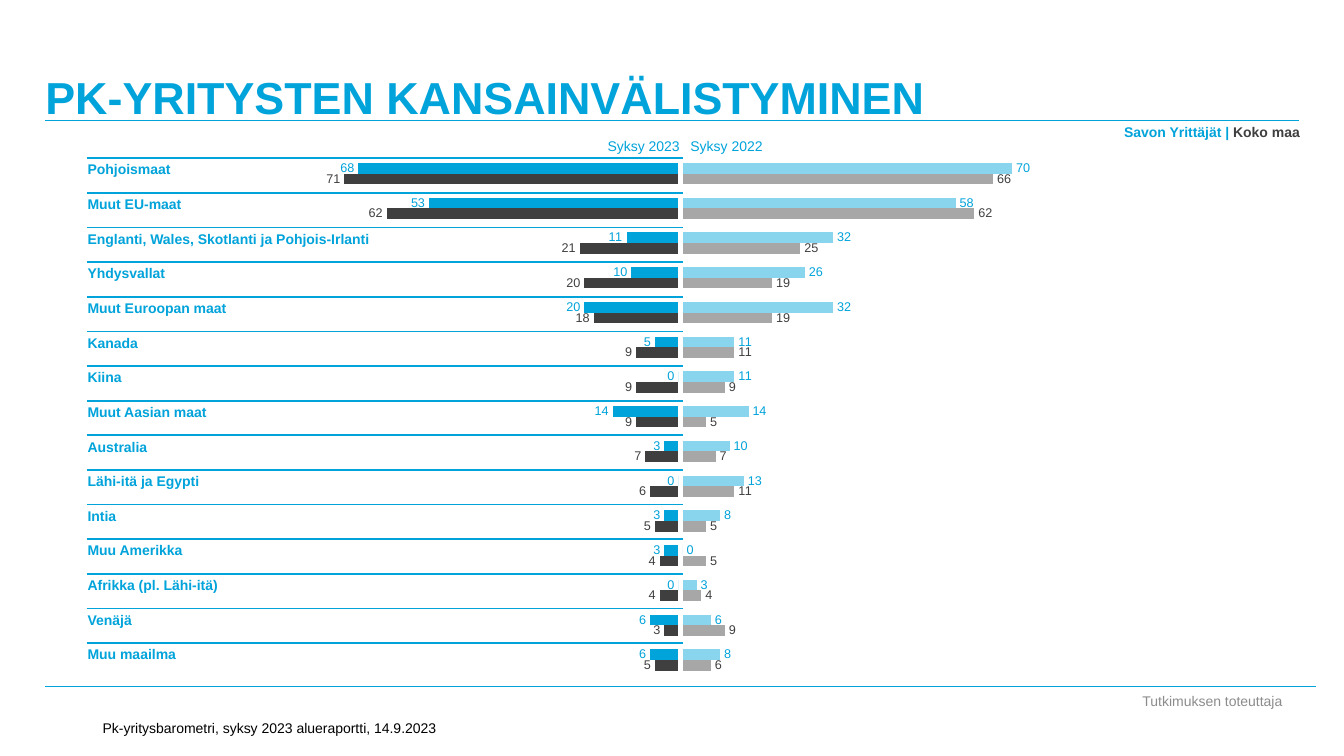
import pptx
import pptx.chart.data
import pptx.dml.color
import pptx.enum.chart
import pptx.enum.shapes
import pptx.enum.text
import pptx.oxml
import pptx.oxml.ns
import pptx.util
from lxml import etree

Inches = pptx.util.Inches
Pt = pptx.util.Pt
RGBColor = pptx.dml.color.RGBColor
Align = pptx.enum.text.PP_ALIGN
Anchor = pptx.enum.text.MSO_ANCHOR
Fit = pptx.enum.text.MSO_AUTO_SIZE
qn = pptx.oxml.ns.qn

BLUE = RGBColor(0x00, 0xA3, 0xDA)
DARK = RGBColor(0x3F, 0x3F, 0x3F)
SKY = RGBColor(0x8A, 0xD5, 0xEE)
SILVER = RGBColor(0xA7, 0xA7, 0xA7)
GRAY = RGBColor(0x8C, 0x8C, 0x8C)
BLACK = RGBColor(0x00, 0x00, 0x00)

# Market, autumn 2023 (region, country), autumn 2022 (region, country)
MARKETS = [
    ("Pohjoismaat", 68, 71, 70, 66),
    ("Muut EU-maat", 53, 62, 58, 62),
    ("Englanti, Wales, Skotlanti ja Pohjois-Irlanti", 11, 21, 32, 25),
    ("Yhdysvallat", 10, 20, 26, 19),
    ("Muut Euroopan maat", 20, 18, 32, 19),
    ("Kanada", 5, 9, 11, 11),
    ("Kiina", 0, 9, 11, 9),
    ("Muut Aasian maat", 14, 9, 14, 5),
    ("Australia", 3, 7, 10, 7),
    ("Lähi-itä ja Egypti", 0, 6, 13, 11),
    ("Intia", 3, 5, 8, 5),
    ("Muu Amerikka", 3, 4, 0, 5),
    ("Afrikka (pl. Lähi-itä)", 0, 4, 3, 4),
    ("Venäjä", 6, 3, 6, 9),
    ("Muu maailma", 6, 5, 8, 6),
]
TOP, LAST = 1.57, 6.38
PITCH = (LAST - TOP) / (len(MARKETS) - 1)


class Page:
    face = "Arial"

    def __init__(self, deck):
        self.slide = deck.slides.add_slide(deck.slide_layouts[6])

    def text(self, box, runs, size=10, bold=False, align=Align.LEFT,
             anchor=Anchor.TOP, grow=True, inset=True, space=None):
        """Add one paragraph; runs is a list of (words, colour)."""
        shape = self.slide.shapes.add_textbox(*map(Inches, box))
        frame = shape.text_frame
        frame.word_wrap = True
        frame.auto_size = Fit.SHAPE_TO_FIT_TEXT if grow else Fit.NONE
        frame.vertical_anchor = anchor
        if not inset:
            frame.margin_left = frame.margin_right = 0
            frame.margin_top = frame.margin_bottom = 0
        para = frame.paragraphs[0]
        para.alignment = align
        if space:
            para.line_spacing = space
        para.font.name = self.face
        para.font.size = Pt(size)
        para.font.bold = bold
        if len(runs) == 1:
            para.font.color.rgb = runs[0][1]
        for words, color in runs:
            run = para.add_run()
            run.text = words
            if len(runs) > 1:
                run.font.color.rgb = color

    def rule(self, left, right, y, width):
        line = self.slide.shapes.add_connector(
            pptx.enum.shapes.MSO_CONNECTOR.STRAIGHT,
            Inches(left), Inches(y), Inches(right), Inches(y))
        line.line.color.rgb = BLUE
        line.line.width = Pt(width)
        etree.SubElement(line._element.spPr, qn("a:effectLst"))

    def bars(self, left, pairs, fills, flip):
        """Add a clustered bar chart; flip makes it grow to the left."""
        data = pptx.chart.data.CategoryChartData(number_format="#,##0")
        data.categories = [str(n + 1) for n in range(len(pairs))]
        for n, vals in enumerate(zip(*pairs), 1):
            data.add_series(f"Series {n}", vals)
        chart = self.slide.shapes.add_chart(
            pptx.enum.chart.XL_CHART_TYPE.BAR_CLUSTERED, Inches(left),
            Inches(1.55), Inches(5.01), Inches(5.17), data).chart
        chart.has_legend = False
        chart.has_title = False
        chart.font.name = self.face
        chart.font.size = Pt(20)
        chart.font.color.rgb = BLACK
        cats, vals = chart.category_axis, chart.value_axis
        cats.reverse_order = True
        vals.reverse_order = flip
        vals.minimum_scale, vals.maximum_scale = 0, 100
        vals.has_major_gridlines = False
        cats.visible = vals.visible = False

        plot = chart.plots[0]
        plot.gap_width = 127
        plot.overlap = 0
        plot.vary_by_categories = False
        for series, fill, ink in zip(plot.series, fills, (BLUE, DARK)):
            series.format.fill.solid()
            series.format.fill.fore_color.rgb = fill
            tags = series.data_labels
            tags.show_value = True
            tags.position = pptx.enum.chart.XL_LABEL_POSITION.OUTSIDE_END
            tags.number_format = "#,##0"
            tags.number_format_is_linked = False
            tags.font.name = self.face
            tags.font.size = Pt(9)
            tags.font.color.rgb = ink
        self.fill(chart)

    def fill(self, chart):
        """Stretch the plot over the height of the chart frame."""
        area = chart._chartSpace.find(".//" + qn("c:plotArea"))
        for old in area.findall(qn("c:layout")):
            area.remove(old)
        layout = etree.Element(qn("c:layout"))
        manual = etree.SubElement(layout, qn("c:manualLayout"))
        for tag, val in (("layoutTarget", "inner"), ("xMode", "edge"),
                         ("yMode", "edge"), ("x", "0.034"), ("y", "0"),
                         ("w", "0.932"), ("h", "1")):
            etree.SubElement(manual, qn("c:" + tag)).set("val", val)
        area.insert(0, layout)


def main():
    deck = pptx.Presentation()
    deck.slide_width, deck.slide_height = Inches(13.33), Inches(7.5)
    page = Page(deck)

    page.text((11.16, 6.82, 1.73, 0.26), [("Tutkimuksen toteuttaja", GRAY)],
              align=Align.CENTER, anchor=Anchor.MIDDLE, grow=False)
    page.text((0.45, 0, 12.3, 1.22),
              [("PK-YRITYSTEN KANSAINVÄLISTYMINEN", BLUE)], size=32, bold=True,
              anchor=Anchor.BOTTOM, grow=False, inset=False)
    page.text((0.92, 7, 4.17, 0.35),
              [("Pk-yritysbarometri, syksy 2023 alueraportti, 14.9.2023", BLACK)],
              anchor=Anchor.BOTTOM, grow=False)
    page.rule(0.45, 12.88, 1.2, 0.75)
    page.rule(0.45, 13.05, 6.81, 0.75)
    page.text((8.13, 1.18, 4.86, 0.27),
              [("Savon Yrittäjät | ", BLUE), ("Koko maa", DARK)],
              bold=True, align=Align.RIGHT)

    page.bars(1.89, [row[1:3] for row in MARKETS], (BLUE, DARK), True)
    for n, row in enumerate(MARKETS):
        y = TOP + n * PITCH
        page.rule(0.86, 6.77, y, 1.25)
        page.text((0.77, y + 0.01, 3.19, 0.24), [(row[0], BLUE)],
                  bold=True, space=0.8)
    page.bars(6.6, [row[3:5] for row in MARKETS], (SKY, SILVER), False)

    page.text((6.75, 1.32, 1.03, 0.27), [("Syksy 2022", BLUE)])
    page.text((5.81, 1.32, 1.03, 0.27), [("Syksy 2023", BLUE)],
              align=Align.RIGHT)
    deck.save("out.pptx")


if __name__ == "__main__":
    main()
